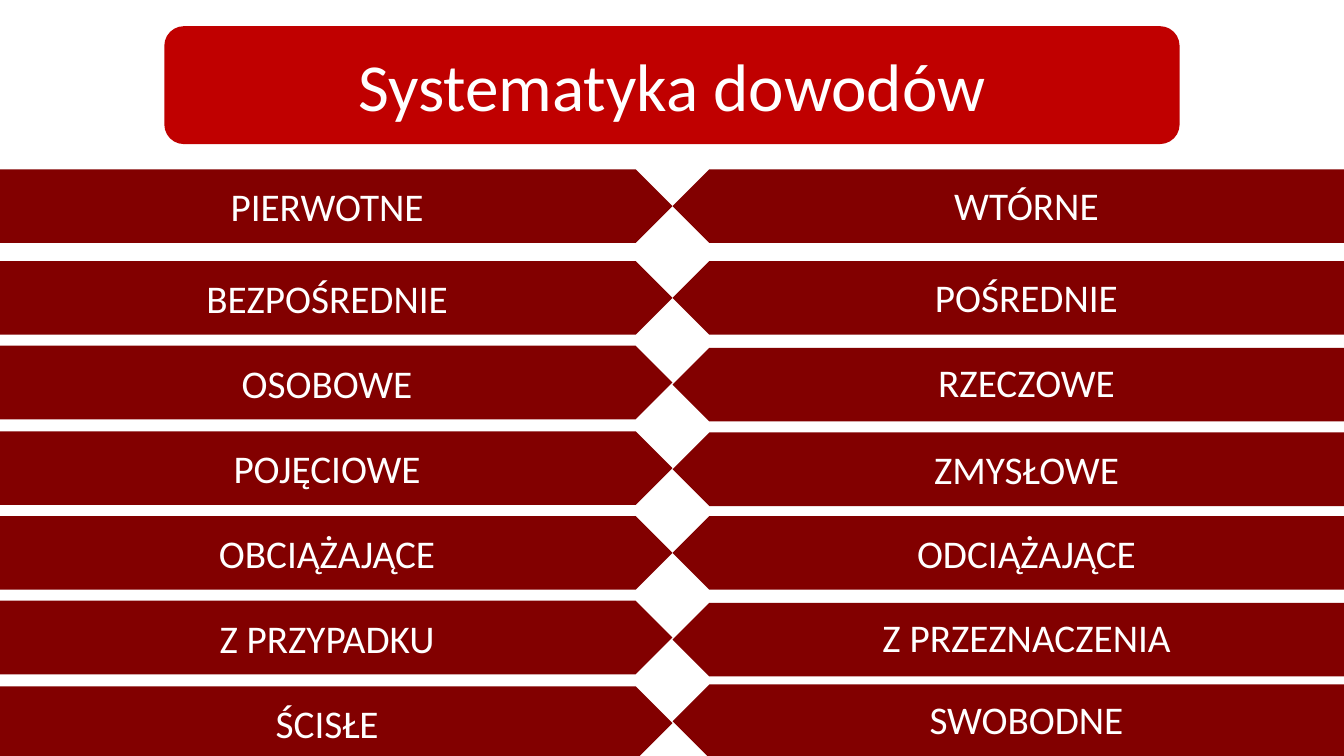
import pptx
import pptx.util
import pptx.dml.color
import pptx.enum.shapes
import pptx.enum.text

Inches = pptx.util.Inches
SHAPES = pptx.enum.shapes.MSO_SHAPE
FONT = "Calibri"
WHITE = "FFFFFF"
RED = "C00000"
DARK_RED = "820000"
HALF_WIDTH = 6.67
BAR_HEIGHT = 0.73
LABEL_LEFT, LABEL_WIDTH, LABEL_HEIGHT = 7.02, 6.32, 0.57

EVIDENCE_PAIRS = [
    ("PIERWOTNE", 1.68, "WTÓRNE", 1.68, 1.75),
    ("BEZPOŚREDNIE", 2.59, "POŚREDNIE", 2.59, 2.66),
    ("OSOBOWE", 3.43, "RZECZOWE", 3.45, 3.51),
    ("POJĘCIOWE", 4.28, "ZMYSŁOWE", 4.29, 4.37),
    ("OBCIĄŻAJĄCE", 5.12, "ODCIĄŻAJĄCE", 5.12, 5.2),
    ("Z PRZYPADKU", 5.96, "Z PRZEZNACZENIA", 5.98, 6.04),
    ("ŚCISŁE", 6.81, "SWOBODNE", 6.79, 6.85),
]


def color(value):
    return pptx.dml.color.RGBColor.from_string(value)


def write_text(shape, text, size):
    text_frame = shape.text_frame
    text_frame.word_wrap = True
    text_frame.text = text
    paragraph = text_frame.paragraphs[0]
    paragraph.alignment = pptx.enum.text.PP_ALIGN.CENTER
    font = paragraph.runs[0].font
    font.name = FONT
    font.size = pptx.util.Pt(size)
    font.color.rgb = color(WHITE)


def add_block(slide, kind, left, top, width, height, fill):
    shape = slide.shapes.add_shape(
        kind, Inches(left), Inches(top), Inches(width), Inches(height)
    )
    shape.shadow.inherit = False
    shape.fill.solid()
    shape.fill.fore_color.rgb = color(fill)
    shape.line.fill.background()
    shape.text_frame.vertical_anchor = pptx.enum.text.MSO_ANCHOR.MIDDLE
    return shape


def add_bar(slide, left, top):
    return add_block(
        slide, SHAPES.PENTAGON, left, top, HALF_WIDTH, BAR_HEIGHT, DARK_RED
    )


def add_label(slide, text, top):
    label = slide.shapes.add_textbox(
        Inches(LABEL_LEFT), Inches(top), Inches(LABEL_WIDTH), Inches(LABEL_HEIGHT)
    )
    write_text(label, text, 28)
    label.text_frame.auto_size = pptx.enum.text.MSO_AUTO_SIZE.SHAPE_TO_FIT_TEXT


def add_pair(slide, left_text, left_top, right_text, right_top, label_top):
    write_text(add_bar(slide, 0, left_top), left_text, 28)
    add_bar(slide, HALF_WIDTH, right_top).rotation = 180
    add_label(slide, right_text, label_top)


def main():
    presentation = pptx.Presentation()
    presentation.slide_width = Inches(13.33)
    presentation.slide_height = Inches(7.5)
    slide = presentation.slides.add_slide(presentation.slide_layouts[6])
    title = add_block(
        slide, SHAPES.ROUNDED_RECTANGLE, 1.63, 0.26, 10.07, 1.17, RED
    )
    write_text(title, "Systematyka dowodów", 48)
    for pair in EVIDENCE_PAIRS:
        add_pair(slide, *pair)
    presentation.save("out.pptx")


if __name__ == "__main__":
    main()
